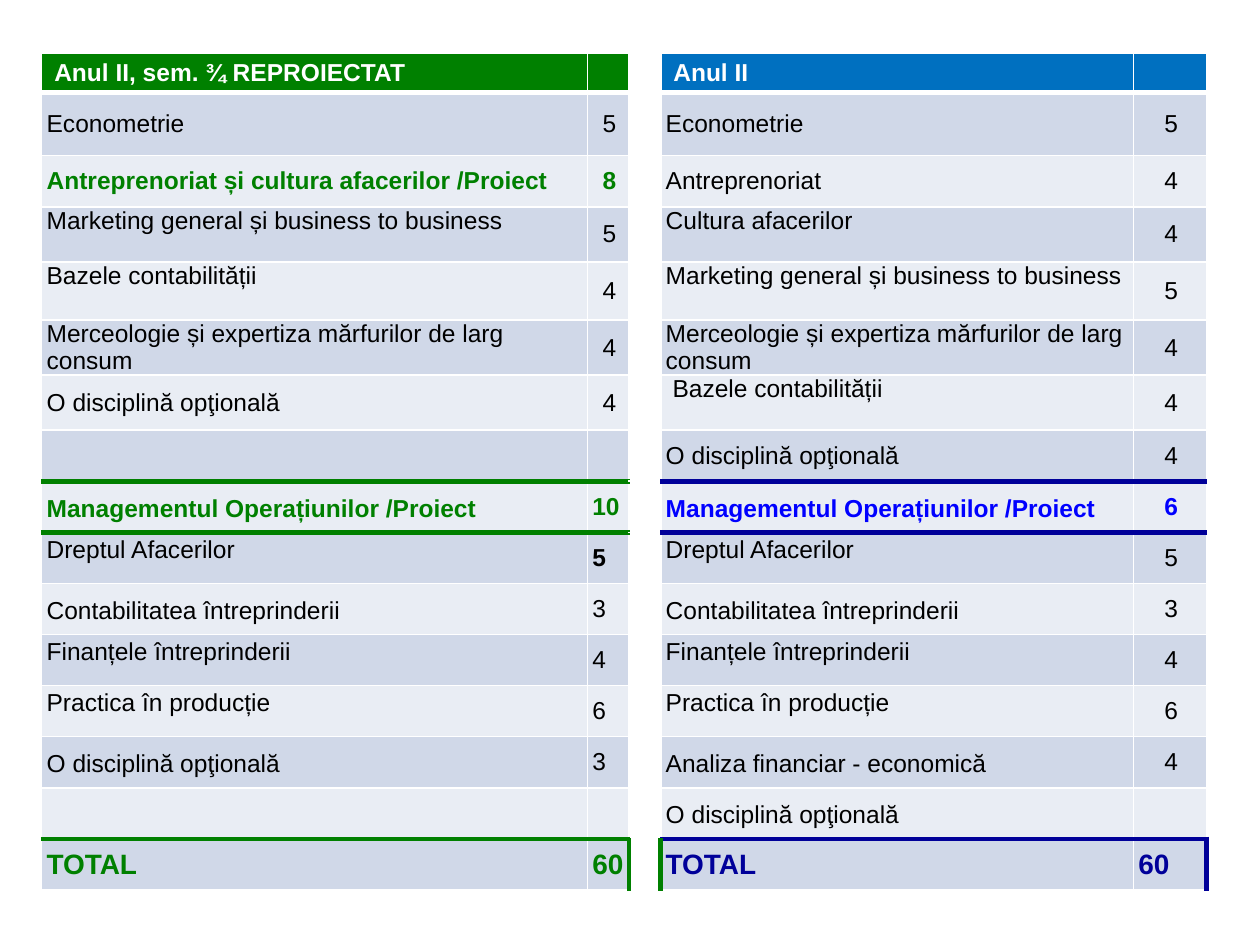
from lxml import etree
from pptx import Presentation
from pptx.dml.color import RGBColor
from pptx.enum.text import MSO_ANCHOR, PP_ALIGN
from pptx.oxml.ns import qn
from pptx.util import Cm, Pt

LEFT, CENTER = PP_ALIGN.LEFT, PP_ALIGN.CENTER
TOP, MIDDLE = MSO_ANCHOR.TOP, MSO_ANCHOR.MIDDLE

THEME = dict(font="Arial", body=14, total=16, line=1, rule=3,
             white="FFFFFF", black="000000", green="008000", azure="0070C0",
             blue="0000FF", navy="000099", bands=("E9EDF4", "D0D8E8"))
WHITE, BLACK, GREEN = THEME["white"], THEME["black"], THEME["green"]
AZURE, BLUE, NAVY = THEME["azure"], THEME["blue"], THEME["navy"]

# Redesigned year and current year: course, credits, course, credits
ROWS = [
    ("Anul II, sem. ¾ REPROIECTAT", "", "Anul II", ""),
    ("Econometrie", "5", "Econometrie", "5"),
    ("Antreprenoriat și cultura afacerilor /Proiect", "8", "Antreprenoriat", "4"),
    ("Marketing general și business to business", "5", "Cultura afacerilor", "4"),
    ("Bazele contabilității", "4", "Marketing general și business to business", "5"),
    ("Merceologie și expertiza mărfurilor de larg consum", "4",
     "Merceologie și expertiza mărfurilor de larg consum", "4"),
    ("O disciplină opţională", "4", " Bazele contabilității", "4"),
    ("", "", "O disciplină opţională", "4"),
    ("Managementul Operațiunilor /Proiect", "10",
     "Managementul Operațiunilor /Proiect", "6"),
    ("Dreptul Afacerilor", "5", "Dreptul Afacerilor", "5"),
    ("Contabilitatea întreprinderii", "3", "Contabilitatea întreprinderii", "3"),
    ("Finanțele întreprinderii", "4", "Finanțele întreprinderii", "4"),
    ("Practica în producție", "6", "Practica în producție", "6"),
    ("O disciplină opţională", "3", "Analiza financiar - economică", "4"),
    ("", "", "O disciplină opţională", ""),
    ("TOTAL", "60", "TOTAL", "60"),
]
COL_WIDTHS = [11, 0.84, 0.64, 9.53, 1.47]
ROW_HEIGHTS = [0.79, 1.27, 1.04, 1.11, 1.17, 1.11, 1.11] + [1.03] * 9
HEADER, ENTREPRENEURSHIP, OPTIONAL, MANAGEMENT, LAW, TOTAL = 0, 2, 6, 8, 9, 15
GAP_COL = 2
TOP_ROWS = (3, 4, 9, 11, 12)


def write(cell, text, size=THEME["body"], color=BLACK, bold=False,
          align=LEFT, anchor=MIDDLE, spacing=1.0):
    cell.vertical_anchor = anchor
    p = cell.text_frame.paragraphs[0]
    p.alignment, p.line_spacing = align, spacing
    p.font.size = Pt(size)
    if text:
        r = p.add_run()
        r.text = text
        r.font.name, r.font.size, r.font.bold = THEME["font"], Pt(size), bold
        r.font.color.rgb = RGBColor.from_string(color)


def set_borders(cell, **rules):
    tcPr = cell._tc.get_or_add_tcPr()
    for side in "LRTB":
        color = rules.get(side, WHITE)
        width = THEME["rule"] if side in rules else THEME["line"]
        ln = etree.SubElement(tcPr, qn(f"a:ln{side}"), w=str(Pt(width)))
        fill = etree.SubElement(ln, qn("a:solidFill"))
        etree.SubElement(fill, qn("a:srgbClr"), val=color)


prs = Presentation()
prs.slide_width, prs.slide_height = Cm(25.4), Cm(19.05)
s = prs.slides.add_slide(prs.slide_layouts[6])

# Table grid
table = s.shapes.add_table(len(ROWS), len(COL_WIDTHS), Cm(0.84), Cm(1.07),
                           Cm(sum(COL_WIDTHS)), Cm(sum(ROW_HEIGHTS))).table
table.first_row = table.horz_banding = False
for column, width in zip(table.columns, COL_WIDTHS):
    column.width = Cm(width)
for row, height in zip(table.rows, ROW_HEIGHTS):
    row.height = Cm(height)

for i, (course, credits, old_course, old_credits) in enumerate(ROWS):
    for j, text in enumerate((course, credits, "", old_course, old_credits)):
        cell = table.cell(i, j)
        redesigned, is_course = j < GAP_COL, j in (0, 3)
        accent = GREEN if redesigned else NAVY

        # Margins
        if i == HEADER:
            cell.margin_top = cell.margin_bottom = Cm(0.08)
        else:
            cell.margin_left, cell.margin_right = Cm(0.1), Cm(0.05)
            cell.margin_top = cell.margin_bottom = 0

        # Borders: heavy rules around the management and total rows
        rules = {}
        if i == HEADER:
            rules["B"] = WHITE
        if j != GAP_COL:
            if i in (MANAGEMENT, LAW, TOTAL):
                rules["T"] = accent
            if i + 1 in (MANAGEMENT, LAW, TOTAL):
                rules["B"] = accent
        if i == TOTAL:
            if j in (1, 4):
                rules["R"] = accent
            elif j == GAP_COL:
                rules["L"] = rules["R"] = GREEN
            elif j == 3:
                rules["L"] = GREEN
        set_borders(cell, **rules)

        # Fill
        if j == GAP_COL:
            fill = WHITE
        elif i == HEADER:
            fill = GREEN if redesigned else AZURE
        else:
            fill = THEME["bands"][i % 2]
        cell.fill.solid()
        cell.fill.fore_color.rgb = RGBColor.from_string(fill)

        # Text
        style = {}
        if i == HEADER:
            style.update(color=WHITE, bold=True)
        elif i == TOTAL:
            style.update(color=accent, bold=True, size=THEME["total"])
        elif i == MANAGEMENT:
            style.update(color=GREEN if redesigned else BLUE, bold=True)
        elif i == ENTREPRENEURSHIP and redesigned:
            style.update(color=GREEN, bold=True)
        elif i == LAW and j == 1:
            style.update(bold=True)
        if is_course:
            if i in TOP_ROWS or (i == OPTIONAL and not redesigned):
                style.update(anchor=TOP)
            if MANAGEMENT <= i < TOTAL:
                style.update(spacing=1.15)
        elif i < MANAGEMENT or (j == 4 and i < TOTAL):
            style.update(align=CENTER)
        write(cell, text, **style)

prs.save("out.pptx")
